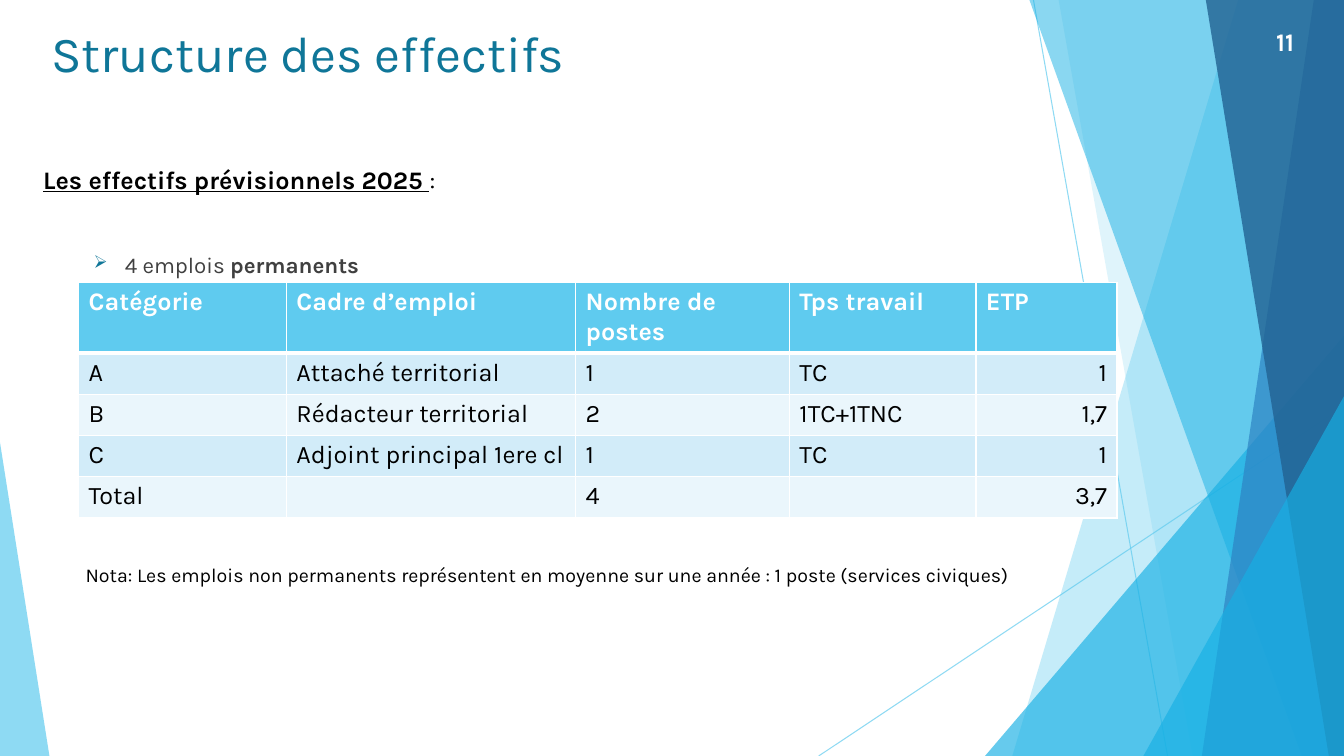
from lxml import etree
from pptx import Presentation
from pptx.dml.color import RGBColor
from pptx.enum.shapes import MSO_CONNECTOR, MSO_SHAPE
from pptx.enum.text import PP_ALIGN
from pptx.oxml.ns import qn
from pptx.util import Inches, Pt

FONT = "Karla"
WHITE, BLACK, GREY, TEAL = "FFFFFF", "000000", "404040", "0F7698"
SKY, AZURE, BLUE, NAVY = "5FCBEF", "17B0E4", "2E83C3", "226292"
BANDS = ("D2ECF9", "EAF6FC")
WIDTH, HEIGHT = 13.33, 7.5

RAYS = [((10.25, 0), (11.58, HEIGHT)), ((WIDTH, 4.03), (8.12, HEIGHT))]

FACETS = [
    ("band", 12.28, 10.04, SKY, 36),
    ("band", 10.5, 11.83, SKY, 20),
    ("triangle", (9.77, 3.33, 3.56, 4.17), 1, AZURE, 66),
    ("band", 10.21, 12.91, AZURE, 50),
    ("band", 13.03, 11.92, BLUE, 70),
    ("band", 11.96, 13.18, NAVY, 80),
    ("triangle", (11.34, 3.93, 1.99, 3.57), 1, AZURE, 66),
    ("triangle", (0, 4.39, 0.49, 3.11), 0, SKY, 70),
]

PAGE_NUMBER = ((12.56, 0.21, 0.67, 0.4), [("11", True, False)], 18, WHITE)
HEADING = (
    (0.33, 1.58, 9.53, 0.4),
    [("Les effectifs prévisionnels 2025 ", True, True), (":", False, False)],
    18, BLACK,
)
PERMANENT_JOBS = (
    (0.33, 2.44, 9.53, 0.36),
    [("4 emplois ", False, False), ("permanents", True, False)],
    16, GREY,
)
NOTA = (
    (0.75, 5.54, 9.82, 0.34),
    [("Nota: Les emplois non permanents représentent en moyenne sur une année : "
      "1 poste (services civiques)", False, False)],
    14, BLACK,
)
TITLE = ((0.41, 0.17, 11.01, 1.44), [("Structure des effectifs", False, False)], 36, TEAL)

STAFF = [
    ("Catégorie", "Cadre d’emploi", "Nombre de postes", "Tps travail", "ETP"),
    ("A", "Attaché territorial", "1", "TC", "1"),
    ("B", "Rédacteur territorial", "2", "1TC+1TNC", "1,7"),
    ("C", "Adjoint principal 1ere cl", "1", "TC", "1"),
    ("Total", "", "4", "", "3,7"),
]
COLUMN_WIDTHS = (2.06, 2.87, 2.12, 1.85, 1.4)
HEADER_HEIGHT, ROW_HEIGHT = 0.69, 0.41


def rgb(color):
    return RGBColor.from_string(color)


def set_opacity(element, percent):
    color = next(element.iter(qn("a:srgbClr")))
    etree.SubElement(color, qn("a:alpha")).set("val", str(percent * 1000))


def add_ray(slide, start, end):
    ray = slide.shapes.add_connector(
        MSO_CONNECTOR.STRAIGHT, *(Inches(v) for v in (*start, *end)))
    ray.line.color.rgb = rgb(SKY)
    ray.line.width = Pt(0.75)
    properties = ray._element.spPr
    set_opacity(properties, 70)
    etree.SubElement(properties, qn("a:effectLst"))


def add_band(slide, top_x, bottom_x):
    builder = slide.shapes.build_freeform(Inches(top_x), 0)
    corners = [(WIDTH, 0), (WIDTH, HEIGHT), (bottom_x, HEIGHT)]
    builder.add_line_segments([(Inches(x), Inches(y)) for x, y in corners], close=True)
    return builder.convert_to_shape()


def add_triangle(slide, box, apex):
    triangle = slide.shapes.add_shape(
        MSO_SHAPE.ISOSCELES_TRIANGLE, *(Inches(v) for v in box))
    triangle.adjustments[0] = apex
    return triangle


def add_facet(slide, kind, first, second, color, opacity):
    facet = {"band": add_band, "triangle": add_triangle}[kind](slide, first, second)
    facet.shadow.inherit = False
    facet.line.fill.background()
    facet.fill.solid()
    facet.fill.fore_color.rgb = rgb(color)
    set_opacity(facet._element.spPr, opacity)


def style(font, size, color, bold, underline=False):
    font.name, font.size = FONT, Pt(size)
    font.bold, font.underline = bold, underline
    font.color.rgb = rgb(color)


def add_text(slide, box, parts, size, color):
    frame = slide.shapes.add_textbox(*(Inches(v) for v in box)).text_frame
    frame.word_wrap = True
    paragraph = frame.paragraphs[0]
    for words, bold, underline in parts:
        run = paragraph.add_run()
        run.text = words
        style(run.font, size, color, bold, underline)
    return paragraph


def add_bullet(paragraph):
    properties = paragraph._p.get_or_add_pPr()
    properties.set("marL", str(Inches(0.81)))
    properties.set("indent", str(Inches(-0.31)))
    bullet_color = etree.SubElement(properties, qn("a:buClr"))
    etree.SubElement(bullet_color, qn("a:srgbClr")).set("val", TEAL)
    etree.SubElement(properties, qn("a:buSzPct")).set("val", "80000")
    etree.SubElement(properties, qn("a:buChar")).set("char", "➢")


def add_borders(cell, top, bottom):
    properties = cell._tc.get_or_add_tcPr()
    for side, width in (("L", 1), ("R", 1), ("T", top), ("B", bottom)):
        border = etree.SubElement(properties, qn(f"a:ln{side}"))
        border.set("w", str(Pt(width)))
        fill = etree.SubElement(border, qn("a:solidFill"))
        etree.SubElement(fill, qn("a:srgbClr")).set("val", WHITE)


def add_staff_table(slide):
    table_height = HEADER_HEIGHT + ROW_HEIGHT * (len(STAFF) - 1)
    table = slide.shapes.add_table(
        len(STAFF), len(COLUMN_WIDTHS), Inches(0.78), Inches(2.8),
        Inches(sum(COLUMN_WIDTHS)), Inches(table_height)).table
    for column, width in zip(table.columns, COLUMN_WIDTHS):
        column.width = Inches(width)
    for r, entries in enumerate(STAFF):
        header = r == 0
        table.rows[r].height = Inches(HEADER_HEIGHT if header else ROW_HEIGHT)
        for c, entry in enumerate(entries):
            cell = table.cell(r, c)
            add_borders(cell, 3 if r == 1 else 1, 3 if header else 1)
            cell.fill.solid()
            cell.fill.fore_color.rgb = rgb(SKY if header else BANDS[(r - 1) % 2])
            cell.text_frame.text = entry
            paragraph = cell.text_frame.paragraphs[0]
            if not header and c == len(entries) - 1:
                paragraph.alignment = PP_ALIGN.RIGHT
            for run in paragraph.runs:
                style(run.font, 18, WHITE if header else BLACK, header)


def main():
    deck = Presentation()
    deck.slide_width, deck.slide_height = Inches(WIDTH), Inches(HEIGHT)
    slide = deck.slides.add_slide(deck.slide_layouts[6])
    for start, end in RAYS:
        add_ray(slide, start, end)
    for facet in FACETS:
        add_facet(slide, *facet)
    for block in (PAGE_NUMBER, HEADING, NOTA, TITLE):
        add_text(slide, *block)
    add_bullet(add_text(slide, *PERMANENT_JOBS))
    add_staff_table(slide)
    deck.save("out.pptx")


if __name__ == "__main__":
    main()
